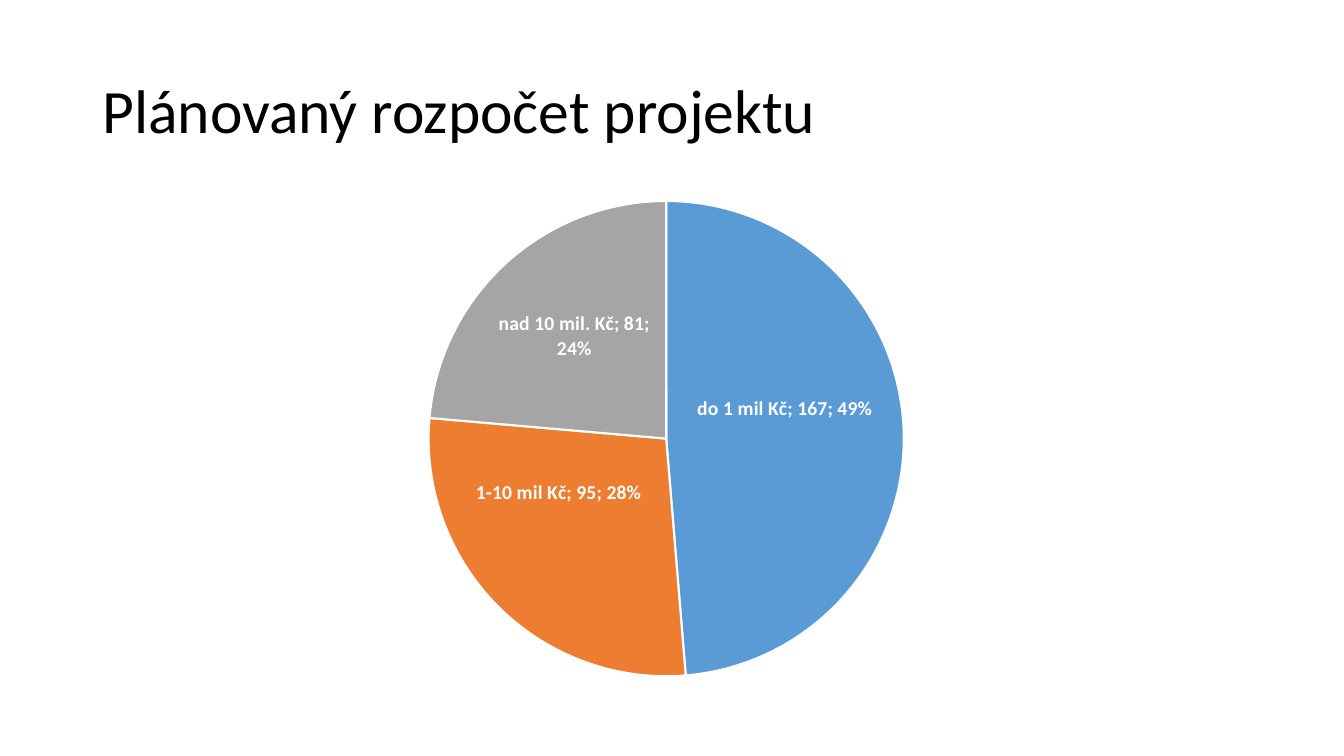
import pptx
import pptx.chart.data
import pptx.dml.color
import pptx.enum.chart
import pptx.enum.text
import pptx.oxml
import pptx.oxml.ns
import pptx.util
from dataclasses import dataclass

Cm = pptx.util.Cm
Pt = pptx.util.Pt

# Content: category, value, slice colour, label shift as a share of the chart
TITLE = "Plánovaný rozpočet projektu"
BUDGETS = [
    ("do 1 mil Kč", 167, "5B9BD5", (0, -0.05)),
    ("1-10 mil Kč", 95, "ED7D31", (-0.02, -0.06)),
    ("nad 10 mil. Kč", 81, "A5A5A5", (-0.01, -0.03)),
]
PLOT = {"x": 0.29, "y": 0.02, "w": 0.41, "h": 0.98}


@dataclass(frozen=True)
class Theme:
    font: str = "Calibri"
    text: str = "000000"
    light: str = "FFFFFF"
    title_size: int = 44
    chart_size: int = 10
    label_size: int = 14
    border: float = 1.5


theme = Theme()


def colour(value):
    return pptx.dml.color.RGBColor.from_string(value)


def style_font(font, size, value, bold=False):
    font.name = theme.font
    font.size = Pt(size)
    font.bold = bold
    font.color.rgb = colour(value)


def layout_element(values, inner=False):
    namespace = pptx.oxml.ns.nsdecls("c")
    target = '<c:layoutTarget val="inner"/>' if inner else ""
    modes = "".join(f'<c:{axis}Mode val="edge"/>' for axis in "xy") if inner else ""
    sizes = "".join(f'<c:{key} val="{value}"/>' for key, value in values.items())
    return pptx.oxml.parse_xml(
        f"<c:layout {namespace}><c:manualLayout>{target}{modes}{sizes}"
        "</c:manualLayout></c:layout>")


def show_all_parts(labels):
    """Show category, value and share, parted by semicolons."""
    for part in ("showCatName", "showVal", "showPercent"):
        labels.find(pptx.oxml.ns.qn(f"c:{part}")).set("val", "1")
    separator = pptx.oxml.parse_xml(
        f'<c:separator {pptx.oxml.ns.nsdecls("c")}>; </c:separator>')
    labels.find(pptx.oxml.ns.qn("c:showBubbleSize")).addnext(separator)


def add_title(slide, left, width):
    box = slide.shapes.add_textbox(left, Cm(1.01), width, Cm(3.68))
    frame = box.text_frame
    frame.word_wrap = True
    frame.vertical_anchor = pptx.enum.text.MSO_ANCHOR.MIDDLE
    paragraph = frame.paragraphs[0]
    paragraph.line_spacing = 0.9
    run = paragraph.add_run()
    run.text = TITLE
    style_font(run.font, theme.title_size, theme.text)


def add_budget_pie(slide, left, width):
    data = pptx.chart.data.CategoryChartData()
    data.categories = [name for name, *_ in BUDGETS]
    data.add_series("Series 1", [value for _, value, *_ in BUDGETS])
    chart = slide.shapes.add_chart(
        pptx.enum.chart.XL_CHART_TYPE.PIE, left, Cm(4.69), width, Cm(12.48), data).chart
    chart.has_title = False
    chart.has_legend = False
    style_font(chart.font, theme.chart_size, theme.text)

    # Plot area
    plot = chart.plots[0]
    plot.vary_by_categories = True
    plot_area = chart.element.find(".//" + pptx.oxml.ns.qn("c:plotArea"))
    for old in plot_area.findall(pptx.oxml.ns.qn("c:layout")):
        plot_area.remove(old)
    plot_area.insert(0, layout_element(PLOT, inner=True))

    # Slices and their labels
    series = plot.series[0]
    center = pptx.enum.chart.XL_LABEL_POSITION.CENTER
    for index, (_, _, fill, shift) in enumerate(BUDGETS):
        point = series.points[index]
        point.format.fill.solid()
        point.format.fill.fore_color.rgb = colour(fill)
        point.format.line.color.rgb = colour(theme.light)
        point.format.line.width = Pt(theme.border)
        style_font(point.data_label.font, theme.label_size, theme.light, bold=True)
        point.data_label.position = center
    labels = series.data_labels
    style_font(labels.font, theme.label_size, theme.light, bold=True)
    labels.position = center
    group = series.data_labels._element
    show_all_parts(group)
    for label, (*_, shift) in zip(group.findall(pptx.oxml.ns.qn("c:dLbl")), BUDGETS):
        show_all_parts(label)
        label.find(pptx.oxml.ns.qn("c:idx")).addnext(layout_element(dict(zip("xy", shift))))


def main():
    presentation = pptx.Presentation()
    presentation.slide_width = Cm(33.87)
    presentation.slide_height = Cm(19.05)
    slide = presentation.slides.add_slide(presentation.slide_layouts[6])
    margin = Cm(2.33)
    width = presentation.slide_width - 2 * margin
    add_title(slide, margin, width)
    add_budget_pie(slide, margin, width)
    presentation.save("out.pptx")


if __name__ == "__main__":
    main()
